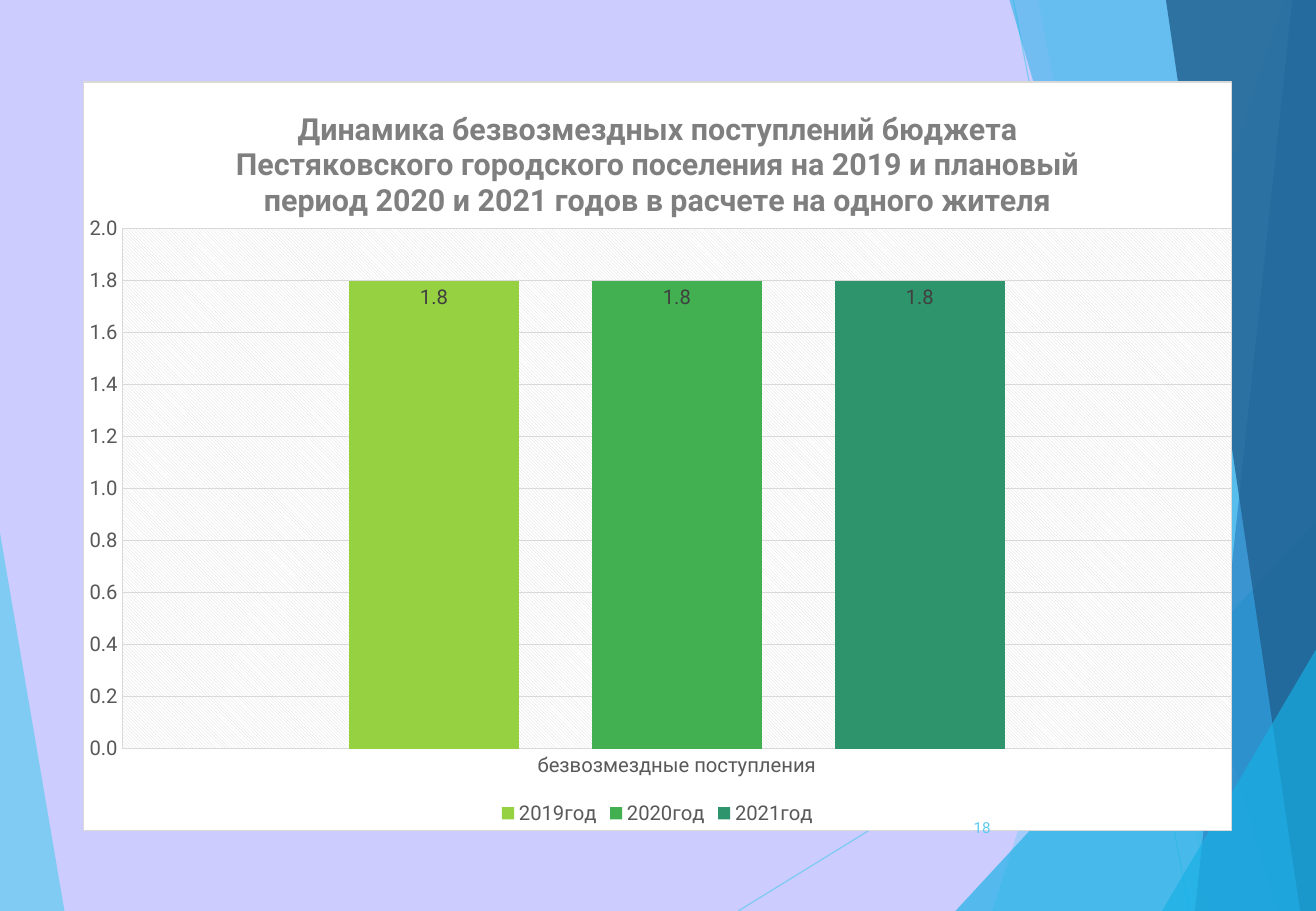
from pptx import Presentation
from pptx.chart.data import CategoryChartData
from pptx.dml.color import RGBColor
from pptx.enum.chart import XL_CHART_TYPE, XL_LABEL_POSITION, XL_LEGEND_POSITION, XL_TICK_MARK
from pptx.enum.shapes import MSO_CONNECTOR
from pptx.enum.text import MSO_ANCHOR, PP_ALIGN
from pptx.oxml import parse_xml
from pptx.oxml.ns import nsdecls, qn
from pptx.util import Inches, Pt

WIDTH, HEIGHT = Inches(10.83), Inches(7.5)
FONT = "Roboto"

LAVENDER = RGBColor(0xCC, 0xCC, 0xFF)
SKY = RGBColor(0x5F, 0xCB, 0xEF)
AZURE = RGBColor(0x17, 0xB0, 0xE4)
BLUE = RGBColor(0x2E, 0x83, 0xC3)
NAVY = RGBColor(0x22, 0x62, 0x92)
WHITE = RGBColor(0xFF, 0xFF, 0xFF)
BLACK = RGBColor(0x00, 0x00, 0x00)
GRID_GRAY = RGBColor(0xD9, 0xD9, 0xD9)
TITLE_GRAY = RGBColor(0x7F, 0x7F, 0x7F)
AXIS_GRAY = RGBColor(0x59, 0x59, 0x59)
LABEL_GRAY = RGBColor(0x40, 0x40, 0x40)

TITLE = ("Динамика безвозмездных поступлений бюджета Пестяковского городского "
         "поселения на 2019 и плановый период 2020 и 2021 годов в расчете на одного жителя")
CATEGORY = "безвозмездные поступления"
YEARS = [
    ("2019год", 1.8, RGBColor(0x96, 0xD1, 0x41)),
    ("2020год", 1.8, RGBColor(0x42, 0xB0, 0x51)),
    ("2021год", 1.8, RGBColor(0x2E, 0x94, 0x6B)),
]

# Points are percentages of the slide's width and height
RAYS = [((56.1, 100), (100, 60.9)), ((77, 0), (90.4, 100))]
FACETS = [  # top point, bottom point, colour, opacity
    ((97.5, 0), (75.4, 100), SKY, 36),
    ((78.9, 0), (92, 100), SKY, 20),
    ((100, 57.2), (72.6, 100), AZURE, 66),
    ((76.7, 0), (97, 100), AZURE, 50),
    ((98.2, 0), (90.8, 100), BLUE, 70),
    ((88.6, 0), (98.8, 100), NAVY, 82),
    ((100, 71.3), (88.3, 100), AZURE, 66),
]


def place(x, y):
    return round(WIDTH * x / 100), round(HEIGHT * y / 100)


def set_opacity(element, percent):
    color = next(element.iter(qn("a:srgbClr")))
    color.append(parse_xml(f'<a:alpha {nsdecls("a")} val="{percent * 1000}"/>'))


def add_facet(page, top, bottom, color, opacity, edge=100):
    """Fill the area between a slanted side and a vertical slide edge."""
    corners = [top, bottom, (edge, 100), (edge, top[1])]
    start, *rest = [place(*corner) for corner in corners]
    builder = page.shapes.build_freeform(*start)
    builder.add_line_segments(rest, close=True)
    facet = builder.convert_to_shape()
    facet.shadow.inherit = False
    facet.fill.solid()
    facet.fill.fore_color.rgb = color
    facet.line.fill.background()
    set_opacity(facet.element.spPr, opacity)


def add_ray(page, start, end):
    ray = page.shapes.add_connector(MSO_CONNECTOR.STRAIGHT, *place(*start), *place(*end))
    ray.line.color.rgb = SKY
    ray.line.width = Pt(0.75)
    set_opacity(ray.element.spPr, 70)
    ray.element.spPr.append(parse_xml(f'<a:effectLst {nsdecls("a")}/>'))


def style_font(font, size, color, bold=False):
    font.name = FONT
    font.size = Pt(size)
    font.bold = bold
    font.color.rgb = color


def style_axis(axis):
    axis.major_tick_mark = axis.minor_tick_mark = XL_TICK_MARK.NONE
    style_font(axis.tick_labels.font, 12, AXIS_GRAY)
    axis.has_major_gridlines = True
    for line in (axis.major_gridlines.format.line, axis.format.line):
        line.color.rgb = GRID_GRAY
        line.width = Pt(0.75)


def style_areas(chart):
    """Set the chart's frame and the plot's position and hatching."""
    space = chart.element
    space.chart.addnext(parse_xml(
        f'<c:spPr {nsdecls("c", "a")}>'
        f'<a:solidFill><a:srgbClr val="{WHITE}"/></a:solidFill>'
        f'<a:ln w="9525"><a:solidFill><a:srgbClr val="{GRID_GRAY}"/></a:solidFill></a:ln>'
        '</c:spPr>'))
    area = space.chart.plotArea
    for layout in area.findall(qn("c:layout")):
        area.remove(layout)
    shares = {"x": 0.034, "y": 0.196, "w": 0.966, "h": 0.695}
    sizes = "".join(f'<c:{key} val="{share}"/>' for key, share in shares.items())
    area.insert(0, parse_xml(
        f'<c:layout {nsdecls("c")}><c:manualLayout><c:layoutTarget val="inner"/>'
        f'<c:xMode val="edge"/><c:yMode val="edge"/>{sizes}</c:manualLayout></c:layout>'))
    area.append(parse_xml(
        f'<c:spPr {nsdecls("c", "a")}><a:pattFill prst="ltDnDiag">'
        f'<a:fgClr><a:srgbClr val="{GRID_GRAY}"/></a:fgClr>'
        f'<a:bgClr><a:srgbClr val="{WHITE}"/></a:bgClr></a:pattFill></c:spPr>'))


def add_income_chart(page):
    data = CategoryChartData(number_format="0.0")
    data.categories = [CATEGORY]
    for year, value, _ in YEARS:
        data.add_series(year, [value])
    chart = page.shapes.add_chart(XL_CHART_TYPE.COLUMN_CLUSTERED, *place(6.28, 8.93),
                                  *place(87.35, 82.27), data).chart
    style_font(chart.font, 10, BLACK)

    # Title and legend
    chart.has_title = True
    para = chart.chart_title.text_frame.paragraphs[0]
    span = para.add_run()
    span.text = TITLE
    style_font(span.font, 18, TITLE_GRAY, bold=True)
    chart.chart_title.include_in_layout = False
    chart.has_legend = True
    chart.legend.position = XL_LEGEND_POSITION.BOTTOM
    chart.legend.include_in_layout = False
    style_font(chart.legend.font, 12, AXIS_GRAY)

    # Axes
    style_axis(chart.category_axis)
    values = chart.value_axis
    style_axis(values)
    values.format.line.fill.background()
    values.minimum_scale, values.maximum_scale, values.major_unit = 0, 2, 0.2
    values.tick_labels.number_format = "0.0"
    values.tick_labels.number_format_is_linked = False

    # Columns
    plot = chart.plots[0]
    plot.gap_width, plot.overlap, plot.vary_by_categories = 267, -43, False
    for series, (_, _, color) in zip(plot.series, YEARS):
        series.format.fill.solid()
        series.format.fill.fore_color.rgb = color
        labels = series.data_labels
        labels.show_value = True
        labels.position = XL_LABEL_POSITION.INSIDE_END
        labels.number_format = "0.0"
        labels.number_format_is_linked = False
        style_font(labels.font, 12, LABEL_GRAY)
    style_areas(chart)


def add_page_number(page, number):
    box = page.shapes.add_textbox(*place(70.55, 88.13), *place(5.63, 5.33))
    frame = box.text_frame
    frame.word_wrap = True
    frame.vertical_anchor = MSO_ANCHOR.MIDDLE
    para = frame.paragraphs[0]
    para.alignment = PP_ALIGN.RIGHT
    span = para.add_run()
    span.text = number
    style_font(span.font, 9, SKY)


def main():
    deck = Presentation()
    deck.slide_width, deck.slide_height = WIDTH, HEIGHT
    page = deck.slides.add_slide(deck.slide_layouts[6])
    page.background.fill.solid()
    page.background.fill.fore_color.rgb = LAVENDER

    # Backdrop
    add_facet(page, (0, 58.5), (4.9, 100), SKY, 70, edge=0)
    for start, end in RAYS:
        add_ray(page, start, end)
    for facet in FACETS:
        add_facet(page, *facet)

    # Content
    add_income_chart(page)
    add_page_number(page, "18")
    deck.save("out.pptx")


if __name__ == "__main__":
    main()
